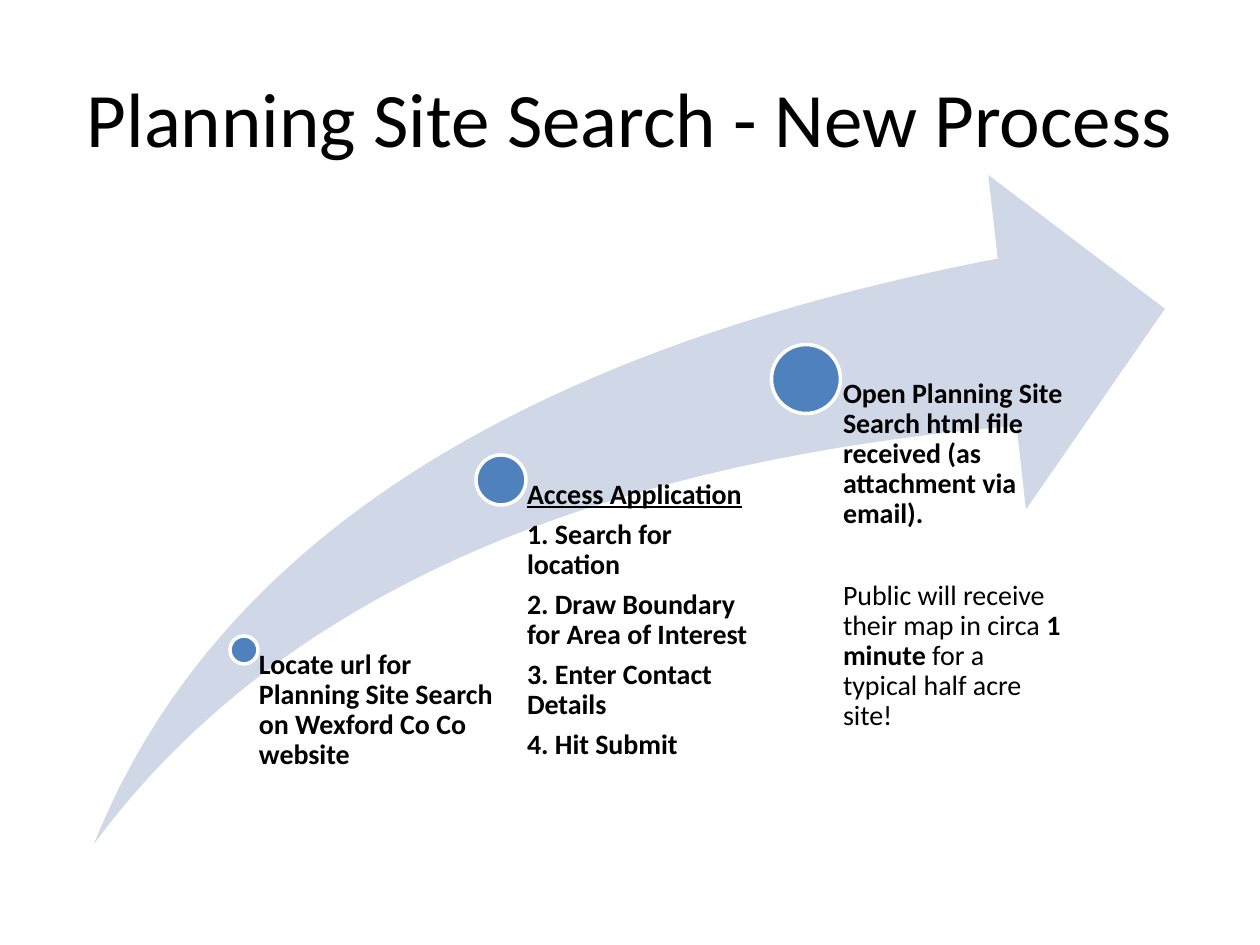
from pptx import Presentation
from pptx.dml.color import RGBColor
from pptx.enum.shapes import MSO_SHAPE as Preset
from pptx.enum.text import MSO_ANCHOR as Anchor, PP_ALIGN as Align
from pptx.util import Emu, Pt

PX_PER_INCH = 126


def px(length):
    return Emu(round(length * 914400 / PX_PER_INCH))


def color(hex_code):
    return RGBColor.from_string(hex_code)


class ProcessSlide:
    FONT, INK = "Calibri", "000000"
    ARROW, DOT, RING = "D0D8E8", "4F81BD", "FFFFFF"
    TITLE_SIZE, BODY_SIZE = 44, 16

    def __init__(self, deck):
        self.slide = deck.slides.add_slide(deck.slide_layouts[6])
        self.diagram = self.slide.shapes.add_group_shape().shapes

    def add_run(self, paragraph, text, size, bold=False, underline=False):
        run = paragraph.add_run()
        run.text = text
        font = run.font
        font.name, font.size = self.FONT, Pt(size)
        font.bold, font.underline = bold, underline
        font.color.rgb = color(self.INK)

    def title(self, text, left, top, width, height):
        frame = self.slide.shapes.add_textbox(
            px(left), px(top), px(width), px(height)).text_frame
        frame.word_wrap = True
        frame.vertical_anchor = Anchor.MIDDLE
        heading = frame.paragraphs[0]
        heading.alignment = Align.CENTER
        self.add_run(heading, text, self.TITLE_SIZE)

    def preset(self, kind, left, top, width, height, fill):
        shape = self.diagram.add_shape(
            kind, px(left), px(top), px(width), px(height))
        shape.shadow.inherit = False
        shape.fill.solid()
        shape.fill.fore_color.rgb = color(fill)
        return shape

    def arrow(self, left, top, width, height):
        swoosh = self.preset(Preset.SWOOSH_ARROW, left, top, width, height,
                             self.ARROW)
        swoosh.adjustments[0] = swoosh.adjustments[1] = 0.25
        swoosh.line.fill.background()

    def dot(self, center_x, center_y, diameter):
        dot = self.preset(Preset.OVAL, center_x - diameter / 2,
                          center_y - diameter / 2, diameter, diameter, self.DOT)
        dot.line.color.rgb = color(self.RING)
        dot.line.width = Pt(2)

    def step_text(self, left, top, width, height, inset, paragraphs):
        frame = self.diagram.add_textbox(
            px(left), px(top), px(width), px(height)).text_frame
        frame.word_wrap = True
        frame.margin_left = px(inset)
        frame.margin_top = frame.margin_right = frame.margin_bottom = 0
        for index, (space_before, runs) in enumerate(paragraphs):
            paragraph = frame.add_paragraph() if index else frame.paragraphs[0]
            paragraph.line_spacing = 0.9
            paragraph.space_before = Pt(space_before)
            paragraph.space_after = Pt(0.35 * self.BODY_SIZE)
            for text, bold, underline in runs:
                self.add_run(paragraph, text, self.BODY_SIZE, bold, underline)


def bold_line(text, underline=False):
    return 0, [(text, True, underline)]


LOCATE = [bold_line("Locate url for Planning Site Search on Wexford Co Co website")]
ACCESS = [
    bold_line("Access Application", underline=True),
    bold_line("1. Search for location"),
    bold_line("2. Draw Boundary for Area of Interest"),
    bold_line("3. Enter Contact Details"),
    bold_line("4. Hit Submit"),
]
RECEIVE = [
    bold_line("Open Planning Site Search html file received (as attachment via email)."),
    (23.5, [("Public will receive their map in circa ", False, False),
            ("1 minute", True, False),
            (" for a typical half acre site!", False, False)]),
]
# Center x, center y, dot diameter, text width, paragraphs
STEPS = [
    (244, 650, 28, 249, LOCATE),
    (501, 480, 50, 257, ACCESS),
    (806, 379, 69, 257, RECEIVE),
]
DIAGRAM_BOTTOM = 844


def main():
    deck = Presentation()
    deck.slide_width, deck.slide_height = px(1260), px(945)
    process = ProcessSlide(deck)

    # Heading
    process.title("Planning Site Search - New Process", 63, 38, 1134, 158)

    # Rising arrow
    process.arrow(94, 175, 1071, 669)

    # Steps: each text starts at its dot's center and clears its right edge
    for x, y, diameter, width, paragraphs in STEPS:
        process.dot(x, y, diameter)
        process.step_text(x, y, width, DIAGRAM_BOTTOM - y,
                          round(0.53 * diameter), paragraphs)

    deck.save("out.pptx")


if __name__ == "__main__":
    main()
